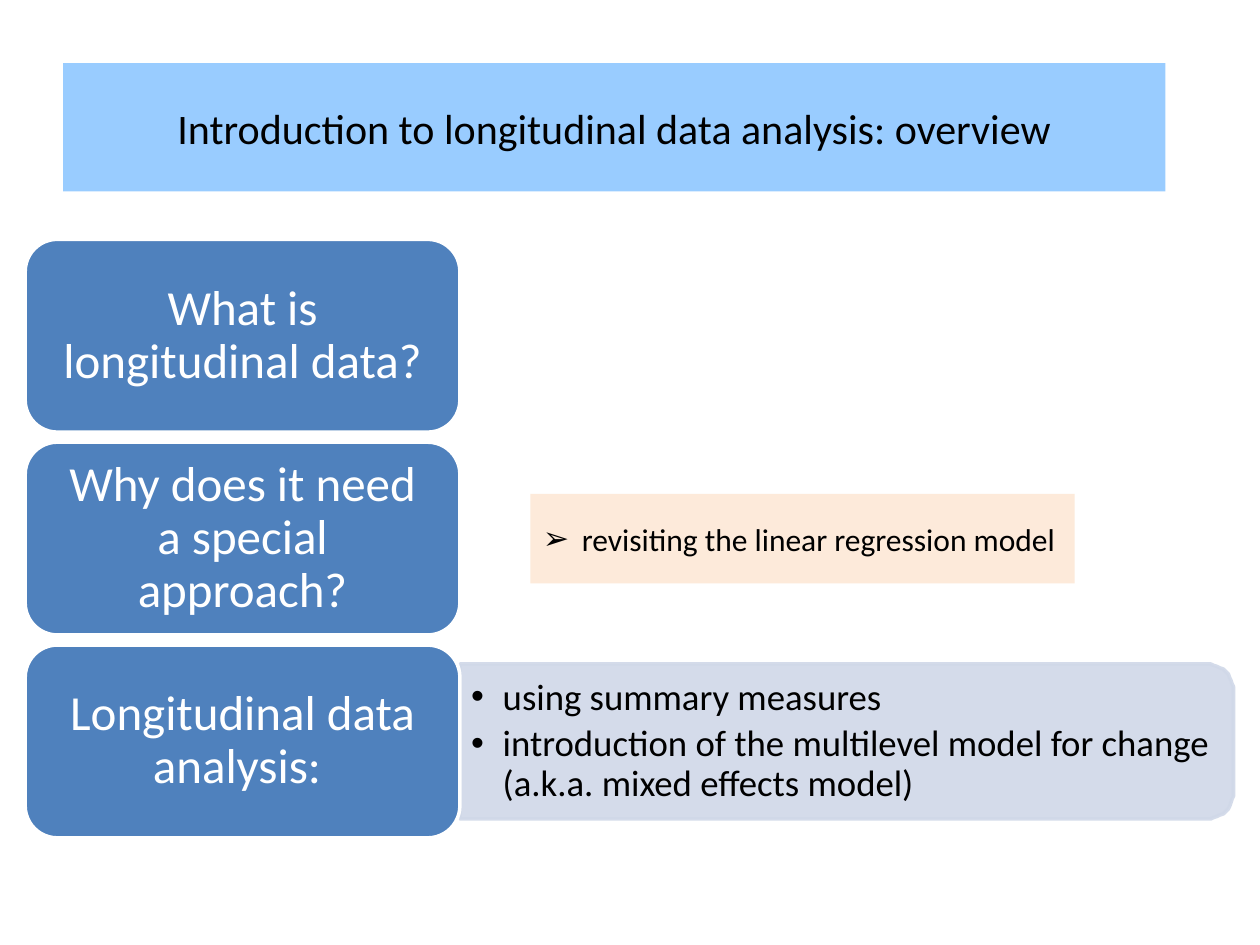
from math import cos, pi, sin

from lxml.etree import SubElement
from pptx import Presentation
from pptx.dml.color import RGBColor
from pptx.enum.shapes import MSO_SHAPE
from pptx.enum.text import MSO_ANCHOR, PP_ALIGN
from pptx.oxml.ns import qn
from pptx.util import Pt

PX = 9144
BLACK = RGBColor(0x00, 0x00, 0x00)
WHITE = RGBColor(0xFF, 0xFF, 0xFF)
SKY = RGBColor(0x99, 0xCC, 0xFF)
BLUE = RGBColor(0x4F, 0x81, 0xBD)
MIST = RGBColor(0xD0, 0xD8, 0xE8)
PEACH = RGBColor(0xFD, 0xEA, 0xDA)
QUESTIONS = [
    "What is longitudinal data?",
    "Why does it need a special approach?",
    "Longitudinal data analysis: ",
]
METHODS = [
    "using summary measures",
    "introduction of the multilevel model for change (a.k.a. mixed effects model)",
]


def paint(shape, fill, line=None):
    """Give a shape a flat fill and an optional two-point outline."""
    shape.shadow.inherit = False
    shape.fill.solid()
    shape.fill.fore_color.rgb = fill
    if line is None:
        shape.line.fill.background()
    else:
        shape.line.color.rgb = line
        shape.line.width = Pt(2)


def add_box(page, kind, box, fill, line=None):
    """Add a painted preset shape in a box given in px."""
    shape = page.shapes.add_shape(kind, *(side * PX for side in box))
    paint(shape, fill, line)
    return shape


def write(shape, lines, size, color, align=PP_ALIGN.LEFT, insets=(10, 5, 10, 5), spacing=None):
    """Write one paragraph per line, centred vertically."""
    frame = shape.text_frame
    frame.word_wrap = True
    frame.vertical_anchor = MSO_ANCHOR.MIDDLE
    frame.margin_left, frame.margin_top, frame.margin_right, frame.margin_bottom = (
        inset * PX for inset in insets
    )
    frame.text = "\n".join(lines)
    for para in frame.paragraphs:
        para.alignment = align
        para.line_spacing = spacing
        for span in para.runs:
            span.font.name = "Calibri"
            span.font.size = Pt(size)
            span.font.color.rgb = color


def add_bullets(shape, mark, indent):
    """Hang a bullet mark before every paragraph."""
    for para in shape.text_frame.paragraphs:
        properties = para._p.get_or_add_pPr()
        properties.set("marL", str(indent * PX))
        properties.set("indent", str(-indent * PX))
        SubElement(properties, qn("a:buFont"), typeface="Arial")
        SubElement(properties, qn("a:buChar"), char=mark)


def add_title(page, box):
    """Add the title band."""
    band = add_box(page, MSO_SHAPE.RECTANGLE, box, SKY)
    write(band, ["Introduction to longitudinal data analysis: overview"], 24, BLACK, PP_ALIGN.CENTER)


def add_methods(page, box):
    """Add the translucent panel with rounded right corners and its bullets."""
    left, top, width, height = box
    right, bottom, radius, steps = left + width, top + height, 21, 12
    angles = [pi / 2 * step / steps for step in range(steps + 1)]
    upper = [(right - radius + radius * sin(a), top + radius - radius * cos(a)) for a in angles]
    lower = [(x, top + bottom - y) for x, y in reversed(upper)]
    builder = page.shapes.build_freeform(left, top, scale=PX)
    builder.add_line_segments(upper + lower + [(left, bottom)], close=True)
    panel = builder.convert_to_shape()
    paint(panel, MIST, MIST)
    for color in panel._element.spPr.iter(qn("a:srgbClr")):
        SubElement(color, qn("a:alpha"), val="90000")
    write(panel, METHODS, 21, BLACK, insets=(9, 10, 15, 10), spacing=0.9)
    for para in panel.text_frame.paragraphs:
        para.space_after = Pt(4)
    add_bullets(panel, "•", 25)


def add_questions(page, box, pitch):
    """Stack the question tiles downwards from the first box."""
    left, top, width, height = box
    for row, question in enumerate(QUESTIONS):
        tile_box = (left, top + row * pitch, width, height)
        tile = add_box(page, MSO_SHAPE.ROUNDED_RECTANGLE, tile_box, BLUE, WHITE)
        write(tile, [question], 28, WHITE, PP_ALIGN.CENTER, (19, 13, 19, 13), 0.9)


def add_note(page, box):
    """Add the note beside the second question."""
    note = add_box(page, MSO_SHAPE.RECTANGLE, box, PEACH)
    write(note, ["revisiting the linear regression model"], 18, BLACK)
    add_bullets(note, "➢", 31)


def main():
    """Build and save the overview slide."""
    deck = Presentation()
    deck.slide_width, deck.slide_height = 1000 * PX, 750 * PX
    page = deck.slides.add_slide(deck.slide_layouts[6])
    add_title(page, (50, 50, 875, 102))
    add_methods(page, (365, 527, 614, 123))
    add_questions(page, (20, 190, 345, 153), 161)
    add_note(page, (421, 392, 432, 71))
    deck.save("out.pptx")


if __name__ == "__main__":
    main()
